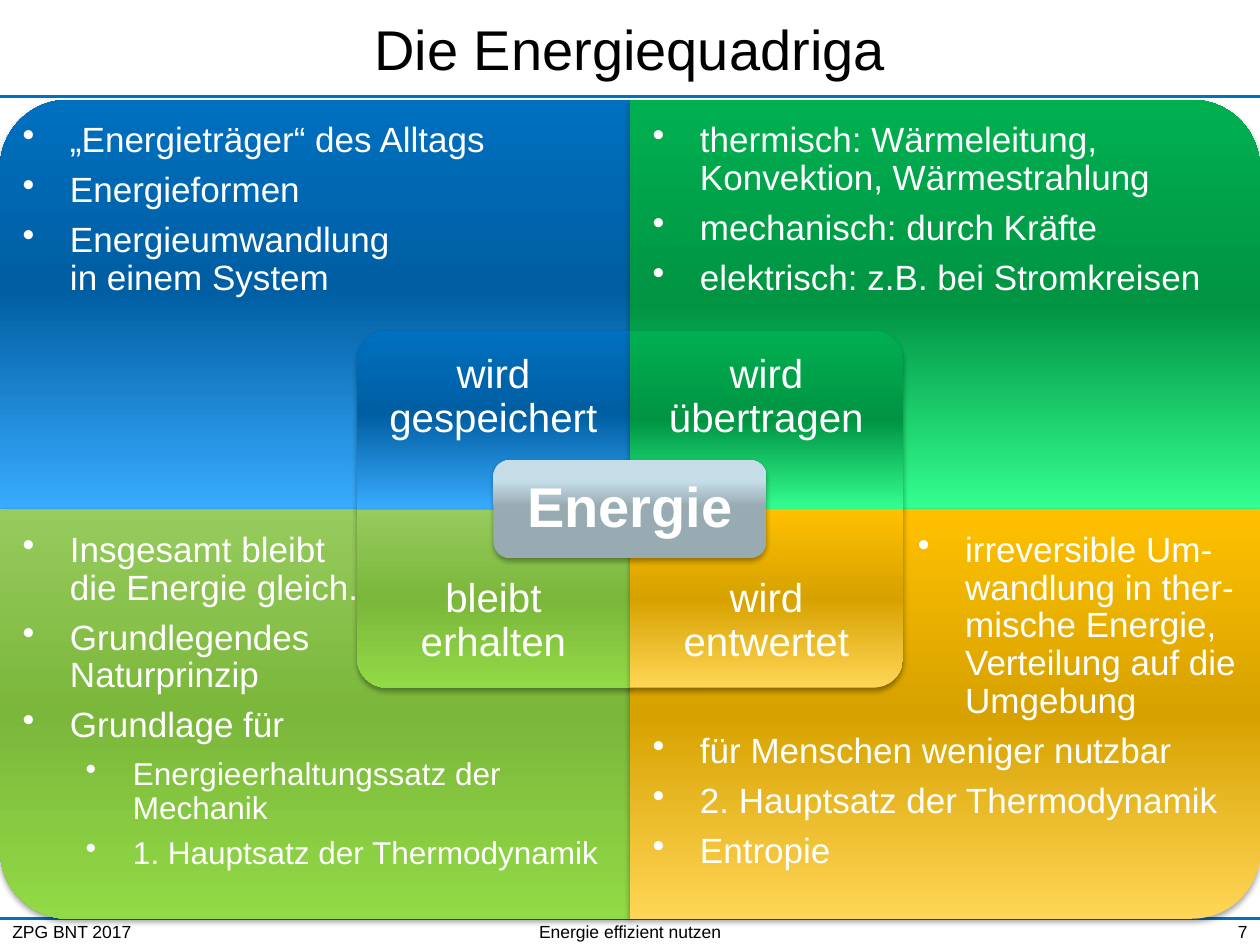
from pptx import Presentation
from pptx.dml.color import RGBColor
from pptx.enum.shapes import MSO_CONNECTOR as Link, MSO_SHAPE as Form
from pptx.enum.text import MSO_ANCHOR as Anchor, PP_ALIGN as Align
from pptx.oxml import parse_xml
from pptx.oxml.ns import nsdecls
from pptx.util import Pt

BLACK = RGBColor(0x00, 0x00, 0x00)
WHITE = RGBColor(0xFF, 0xFF, 0xFF)
RULE = RGBColor(0x00, 0x70, 0xC0)


def stops(*pairs):
    return [(pos, RGBColor.from_string(tone)) for pos, tone in pairs]


BLUE = stops((0, "39ACFF"), (54, "005EA2"), (100, "0070C0"))
GREEN = stops((0, "34FF90"), (50, "009443"), (100, "00B050"))
LIME = stops((0, "96CB5D"), (50, "7BB73B"), (100, "92DA46"))
GOLD = stops((0, "FFD556"), (50, "D7A200"), (100, "FFC000"))
GREY = stops((53, "98AAB2"), (79, "C5DDE7"), (100, "C6DEE9"))

WIDE, HIGH = 720, 540
MID_X, MID_Y = 360, 291
TOP, FOOT = 57, 525
INNER_W, INNER_H = 156, 102
LABEL_H = 76

# column, row, turn, gradient turns with the shape, colours, label
PARTS = [
    (0, 0, 270, 0, BLUE, "wird gespeichert"),
    (0, 1, 180, 1, LIME, "bleibt erhalten"),
    (1, 0, 0, 0, GREEN, "wird übertragen"),
    (1, 1, 90, 0, GOLD, "wird entwertet"),
]

# text, left indent, size
NEAR, DEEP, FAR = 27, 63, 178.5
LISTS = [
    [("„Energieträger“ des Alltags", NEAR, 20),
     ("Energieformen", NEAR, 20),
     ("Energieumwandlung\nin einem System", NEAR, 20)],
    [("Insgesamt bleibt\ndie Energie gleich.", NEAR, 20),
     ("Grundlegendes\nNaturprinzip", NEAR, 20),
     ("Grundlage für", NEAR, 20),
     ("Energieerhaltungssatz der Mechanik", DEEP, 18),
     ("1. Hauptsatz der Thermodynamik", DEEP, 18)],
    [("thermisch: Wärmeleitung, Konvektion, Wärmestrahlung", NEAR, 20),
     ("mechanisch: durch Kräfte", NEAR, 20),
     ("elektrisch: z.B. bei Stromkreisen", NEAR, 20)],
    [("irreversible Um-wandlung in ther-mische Energie, "
      "Verteilung auf die Umgebung", FAR, 20),
     ("für Menschen weniger nutzbar", NEAR, 20),
     ("2. Hauptsatz der Thermodynamik", NEAR, 20),
     ("Entropie", NEAR, 20)],
]


class Page:
    font = "Arial"

    def __init__(self, deck):
        self.slide = deck.slides.add_slide(deck.slide_layouts[5])
        self.shapes = self.slide.shapes

    def style(self, para, size, color, align=Align.LEFT, bold=False):
        para.alignment = align
        for run in para.runs:
            looks = {"name": self.font, "size": Pt(size), "bold": bold}
            for key, value in looks.items():
                setattr(run.font, key, value)
            run.font.color.rgb = color

    def title(self, text, box):
        head = self.shapes.title
        for key, value in zip(("left", "top", "width", "height"), box):
            setattr(head, key, Pt(value))
        head.text_frame.text = text
        head.text_frame.vertical_anchor = Anchor.MIDDLE
        self.style(head.text_frame.paragraphs[0], 32, BLACK, Align.CENTER)

    def rule(self, y):
        line = self.shapes.add_connector(
            Link.STRAIGHT, Pt(0), Pt(y), Pt(WIDE), Pt(y))
        line.line.color.rgb = RULE
        line.line.width = Pt(1.5)
        line._element.spPr.append(
            parse_xml(f"<a:effectLst {nsdecls('a')}/>"))

    def block(self, form, box, tones, turn=0, follow=0):
        """Draw a shaded shape that fills box after being turned."""
        x, y, w, h = box
        if turn % 180:
            x, y, w, h = x + (w - h) / 2, y + (h - w) / 2, h, w
        shape = self.shapes.add_shape(form, Pt(x), Pt(y), Pt(w), Pt(h))
        shape.rotation = turn
        shape.line.fill.background()
        shape.shadow.inherit = False
        marks = "".join(
            f'<a:gs pos="{pos * 1000}"><a:srgbClr val="{tone}"/></a:gs>'
            for pos, tone in tones)
        props = shape._element.spPr
        props.insert(2, parse_xml(
            f'<a:gradFill {nsdecls("a")} rotWithShape="{follow}">'
            f'<a:gsLst>{marks}</a:gsLst>'
            '<a:lin ang="16200000" scaled="0"/></a:gradFill>'))
        props[-1].append(parse_xml(
            f'<a:outerShdw {nsdecls("a")} blurRad="{Pt(3.1)}" '
            f'dist="{Pt(1.8)}" dir="5400000" rotWithShape="0">'
            '<a:srgbClr val="000000"><a:alpha val="35000"/></a:srgbClr>'
            '</a:outerShdw>'))

    def frame(self, box, inset, anchor):
        area = self.shapes.add_textbox(*map(Pt, box)).text_frame
        looks = {"word_wrap": True, "vertical_anchor": anchor}
        for side in ("left", "top", "right", "bottom"):
            looks[f"margin_{side}"] = Pt(inset)
        for key, value in looks.items():
            setattr(area, key, value)
        return area

    def label(self, text, box, size, inset, bold=False):
        area = self.frame(box, inset, Anchor.MIDDLE)
        para = area.paragraphs[0]
        para.text = text
        para.line_spacing = 0.9
        self.style(para, size, WHITE, Align.CENTER, bold)

    def note(self, text, box, align):
        area = self.frame(box, 7.2, Anchor.MIDDLE)
        area.margin_top = area.margin_bottom = 0
        area.text = text
        self.style(area.paragraphs[0], 10, BLACK, align)

    def points(self, items, box):
        area = self.frame(box, 13, Anchor.TOP)
        for i, (text, left, size) in enumerate(items):
            para = area.add_paragraph() if i else area.paragraphs[0]
            para.text = text
            para.line_spacing = 0.9
            para.space_after = Pt(0.35 * size)
            self.style(para, size, WHITE)
            props = para._p.get_or_add_pPr()
            props.set("marL", str(Pt(left)))
            props.set("indent", str(-Pt(NEAR)))
            props.append(parse_xml(f'<a:buChar {nsdecls("a")} char="•"/>'))


def main():
    deck = Presentation()
    deck.slide_width, deck.slide_height = Pt(WIDE), Pt(HIGH)
    page = Page(deck)
    page.title("Die Energiequadriga", (0, 0, WIDE, 55))
    for y in (55, FOOT):
        page.rule(y)

    half = MID_Y - TOP
    for (col, row, turn, follow, tones, _), items in zip(PARTS, LISTS):
        box = (col * MID_X, TOP + row * half, MID_X, half)
        page.block(Form.ROUND_1_RECTANGLE, box, tones, turn, follow)
        page.points(items, box)

    page.note("ZPG BNT 2017", (0, FOOT, 196, 15), Align.LEFT)
    page.note("Energie effizient nutzen", (246, FOOT, 228, 15), Align.CENTER)
    page.note("7", (530, FOOT, 190, 15), Align.RIGHT)

    for col, row, turn, follow, tones, text in PARTS:
        x = MID_X + (col - 1) * INNER_W
        y = MID_Y + (row - 1) * INNER_H
        page.block(Form.ROUND_1_RECTANGLE, (x, y, INNER_W, INNER_H),
                   tones, turn, follow)
        drop = row * (INNER_H - LABEL_H)
        page.label(text, (x, y + drop, INNER_W, LABEL_H), 23, 13)

    core = (MID_X - INNER_W / 2, MID_Y - 28, INNER_W, 56)
    page.block(Form.ROUNDED_RECTANGLE, core, GREY)
    page.label("Energie", core, 32, 9.5, True)
    deck.save("out.pptx")


if __name__ == "__main__":
    main()
